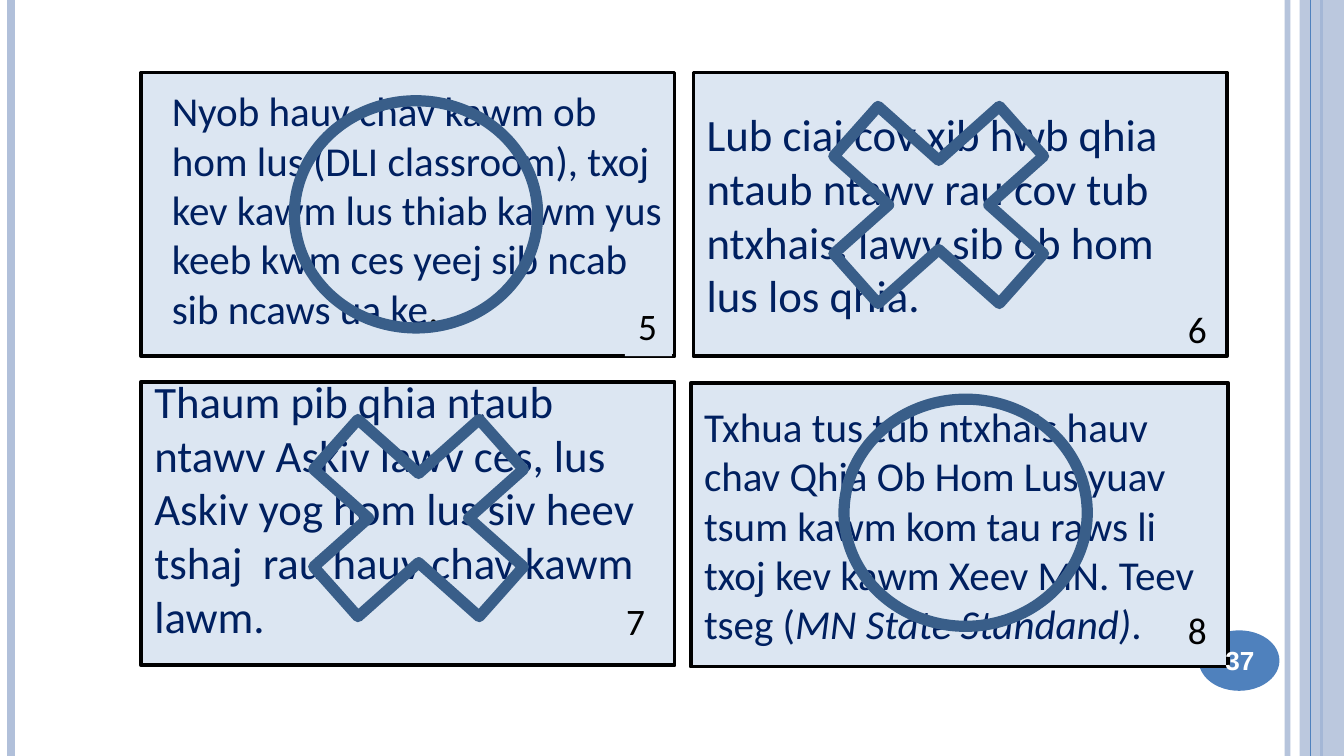
from lxml.etree import SubElement
from pptx import Presentation
from pptx.dml.color import RGBColor
from pptx.enum.shapes import MSO_CONNECTOR, MSO_SHAPE
from pptx.enum.text import MSO_ANCHOR, PP_ALIGN
from pptx.oxml.ns import qn
from pptx.util import Inches, Pt

COLORS = {"card": "DCE6F2", "ink": "002060", "black": "000000", "mark": "395E89",
          "pale": "B1C0DA", "accent": "4F81BD", "white": "FFFFFF"}
WIDTH = 10
HEIGHT = WIDTH * 9 / 16
CARD_WIDTH, CARD_HEIGHT = 3.97, 2.11

RULES = [(9.58, "pale", 3, 93), (0.08, "pale", 4.5, 100), (9.83, "accent", 1.5, 100)]
EDGE_RULE = (9.75, "accent", 0.75, 100)

CARDS = [
    {"at": (1.05, 0.54), "text_at": (1.18, 0.59, 3.9, 1.95), "size": 22,
     "spans": [("Nyob hauv chav kawm ob hom lus (DLI classroom), txoj kev kawm lus thiab "
                "kawm yus keeb kwm ces yeej sib ncab sib ncaws ua ke", "ink", False),
               (".", "black", False)],
     "number": "5", "number_at": (4.65, 2.21, 0.35, 0.44), "number_fill": "card",
     "mark": "circle", "mark_at": (2.19, 0.75)},
    {"at": (5.16, 0.54), "size": 24,
     "spans": [("Lub ciaj cov xib hwb qhia ntaub ntawv rau cov tub ntxhais, lawv sib ob "
                "hom lus los qhia.", "ink", False)],
     "number": "6", "number_at": (8.74, 2.23, 0.4, 0.44),
     "mark": "cross", "mark_at": (5.8, 0.47)},
    {"at": (1.05, 2.84), "size": 24, "bottom": 0.28,
     "spans": [("Thaum pib qhia ntaub ntawv Askiv lawv ces, lus Askiv yog hom lus siv heev "
                "tshaj  rau hauv chav kawm lawm.", "ink", False)],
     "number": "7", "number_at": (4.56, 4.4, 0.4, 0.44),
     "mark": "cross", "mark_at": (1.93, 2.8)},
    {"at": (5.14, 2.85), "width": 4, "size": 22,
     "spans": [("Txhua tus tub ntxhais hauv chav Qhia Ob Hom Lus yuav tsum kawm kom tau raws "
                "li txoj kev kawm Xeev MN. Teev tseg (", "ink", False),
               ("MN State Standand)", "ink", True), (".", "ink", False)],
     "number": "8", "number_at": (8.74, 4.47, 0.4, 0.44),
     "mark": "circle", "mark_at": (6.28, 2.97)},
]
MARKS = {"circle": (MSO_SHAPE.OVAL, 1.81, 1.69),
         "cross": (MSO_SHAPE.MATH_MULTIPLY, 2.37, 2.11)}


def color(name):
    return RGBColor.from_string(COLORS[name])


def set_opacity(element, percent):
    if percent < 100:
        for tint in element.spPr.iter(qn("a:srgbClr")):
            SubElement(tint, qn("a:alpha"), val=str(percent * 1000))


def add_rule(page, left, tint, weight, opacity):
    rule = page.shapes.add_connector(MSO_CONNECTOR.STRAIGHT, Inches(left), 0,
                                     Inches(left), Inches(HEIGHT))
    rule.line.color.rgb = color(tint)
    rule.line.width = Pt(weight)
    set_opacity(rule.element, opacity)
    SubElement(rule.element.spPr, qn("a:effectLst"))


def add_block(page, kind, at, fill=None, line=None, weight=0):
    block = page.shapes.add_shape(kind, *map(Inches, at))
    block.shadow.inherit = False
    if fill:
        block.fill.solid()
        block.fill.fore_color.rgb = color(fill)
    else:
        block.fill.background()
    if line:
        block.line.color.rgb = color(line)
        block.line.width = Pt(weight)
    else:
        block.line.fill.background()
    return block


def write(box, spans, size, font="Calibri", bold=False, anchor=MSO_ANCHOR.TOP,
          align=PP_ALIGN.LEFT, bottom=0.05):
    frame = box.text_frame
    frame.word_wrap = True
    frame.vertical_anchor = anchor
    frame.margin_left = frame.margin_right = Inches(0.1)
    frame.margin_top, frame.margin_bottom = Inches(0.05), Inches(bottom)
    para = frame.paragraphs[0]
    para.alignment = align
    for text, tint, italic in spans:
        span = para.add_run()
        span.text = text
        span.font.name, span.font.size = font, Pt(size)
        span.font.bold, span.font.italic = bold, italic
        span.font.color.rgb = color(tint)


def add_text(page, at, spans, size, **options):
    write(page.shapes.add_textbox(*map(Inches, at)), spans, size, **options)


def add_card(page, card):
    at = (*card["at"], card.get("width", CARD_WIDTH), CARD_HEIGHT)
    block = add_block(page, MSO_SHAPE.RECTANGLE, at, "card", "black", 2)
    number = [(card["number"], "black", False)]
    if "number_fill" in card:
        patch = add_block(page, MSO_SHAPE.RECTANGLE, card["number_at"], card["number_fill"])
        write(patch, number, 20)
    else:
        add_text(page, card["number_at"], number, 20)
    if "text_at" in card:
        add_text(page, card["text_at"], card["spans"], card["size"])
    else:
        write(block, card["spans"], card["size"], anchor=MSO_ANCHOR.MIDDLE,
              bottom=card.get("bottom", 0.05))
    kind, width, height = MARKS[card["mark"]]
    mark = add_block(page, kind, (*card["mark_at"], width, height), None, "mark", 6)
    if card["mark"] == "cross":
        mark.adjustments[0] = 0.235


def main():
    deck = Presentation()
    deck.slide_width, deck.slide_height = Inches(WIDTH), Inches(HEIGHT)
    page = deck.slides.add_slide(deck.slide_layouts[6])
    for rule in RULES:
        add_rule(page, *rule)
    band = add_block(page, MSO_SHAPE.RECTANGLE, (9.67, 0, 0.33, HEIGHT), "pale")
    set_opacity(band.element, 87)
    add_rule(page, *EDGE_RULE)
    add_block(page, MSO_SHAPE.OVAL, (8.92, 4.69, 0.6, 0.45), "accent")
    for card in CARDS:
        add_card(page, card)
    add_text(page, (8.89, 4.7, 0.67, 0.43), [("37", "white", False)], 14, font="Arial",
             bold=True, anchor=MSO_ANCHOR.MIDDLE, align=PP_ALIGN.CENTER)
    deck.save("out.pptx")


if __name__ == "__main__":
    main()
